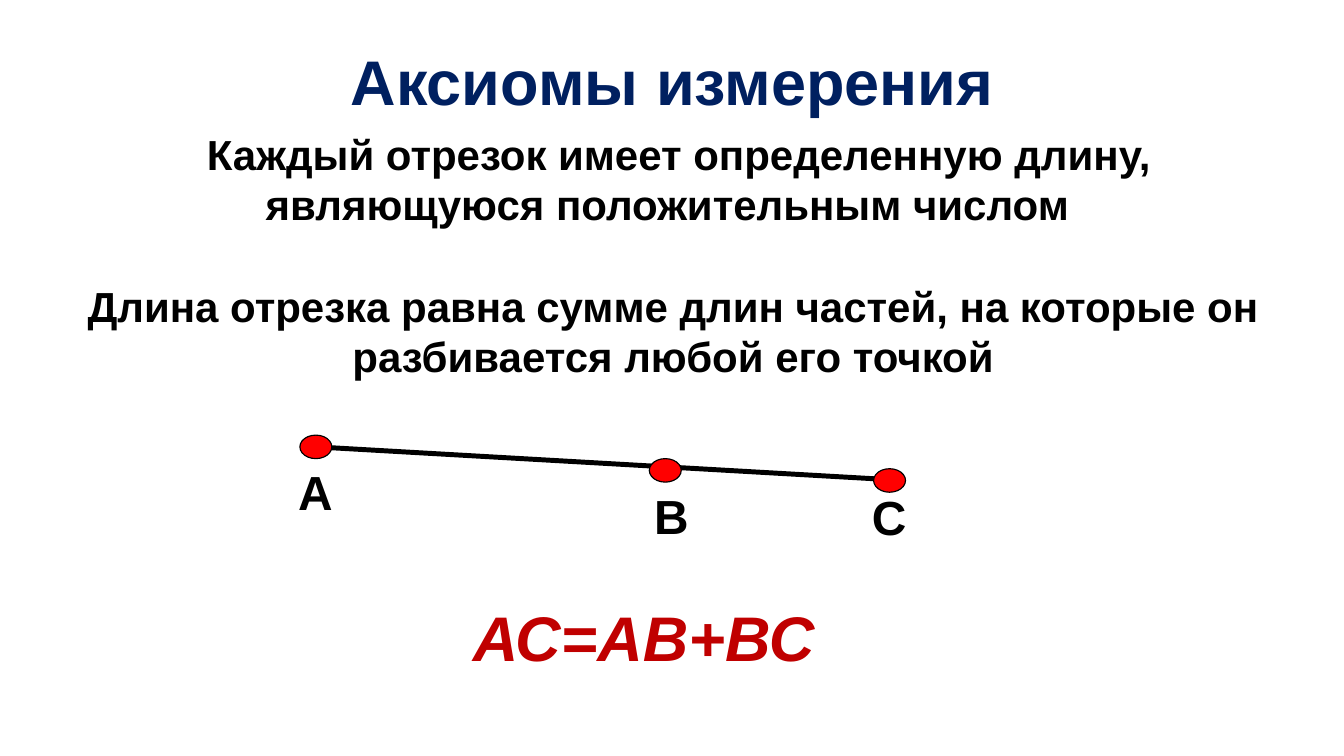
from dataclasses import dataclass

from lxml import etree
from pptx import Presentation, util as u
from pptx.dml.color import RGBColor
from pptx.enum import shapes, text
from pptx.oxml import ns


@dataclass(frozen=True)
class Theme:
    font: str = "Arial"
    navy: str = "002060"
    black: str = "000000"
    red: str = "FF0000"
    dark_red: str = "C00000"
    title: int = 54
    body: int = 36
    label: int = 41
    formula: int = 54
    axiom_gap: float = 43.5
    segment_width: float = 4.25
    dot_outline: float = 1


@dataclass(frozen=True)
class Box:
    """A place on the grid, in columns and rows."""
    col: float
    row: float
    cols: float
    rows: float


@dataclass(frozen=True)
class Point:
    name: str
    dot: Box
    label: Box


THEME = Theme()
COLS, ROWS = 16, 9
CELL = u.Inches(1)

TITLE = Box(0.88, 0.44, 14.24, 1.05)
BODY = Box(0.69, 1.46, 14.65, 3.17)
FORMULA = Box(5.53, 7.08, 4.31, 1.01)
SEGMENT = (3.76, 5.32, 10.76, 5.72)
DOT_SIZE = (0.38, 0.28)
LABEL_SIZE = (0.62, 0.79)

AXIOMS = (
    "\u00a0Каждый отрезок имеет определенную длину, являющуюся положительным числом ",
    "Длина отрезка равна сумме длин частей, на которые он разбивается любой его точкой",
)
POINTS = (
    Point("А", Box(3.57, 5.18, *DOT_SIZE), Box(3.45, 5.46, *LABEL_SIZE)),
    Point("С", Box(10.4, 5.58, *DOT_SIZE), Box(10.28, 5.76, *LABEL_SIZE)),
    Point("В", Box(7.73, 5.46, *DOT_SIZE), Box(7.69, 5.75, *LABEL_SIZE)),
)


def grid(*lengths: float) -> list[int]:
    return [round(length * CELL) for length in lengths]


def place(box: Box) -> list[int]:
    return grid(box.col, box.row, box.cols, box.rows)


def set_frame(tf, inset_x: float, inset_y: float, wrap: bool) -> None:
    tf.margin_left = tf.margin_right = u.Inches(inset_x)
    tf.margin_top = tf.margin_bottom = u.Inches(inset_y)
    tf.vertical_anchor = text.MSO_ANCHOR.TOP
    tf.auto_size = text.MSO_AUTO_SIZE.SHAPE_TO_FIT_TEXT
    tf.word_wrap = wrap


def add_run(p, words: str, size: int, color: str, italic: bool = False) -> None:
    r = p.add_run()
    r.text = words
    r.font.name = THEME.font
    r.font.size = u.Pt(size)
    r.font.bold = True
    r.font.italic = italic
    r.font.color.rgb = RGBColor.from_string(color)


def add_title(s) -> None:
    sp = s.shapes.title
    sp.left, sp.top, sp.width, sp.height = place(TITLE)
    set_frame(sp.text_frame, 0.14, 0.07, True)
    p = sp.text_frame.paragraphs[0]
    p.alignment = text.PP_ALIGN.CENTER
    add_run(p, "Аксиомы измерения", THEME.title, THEME.navy)


def add_axioms(s) -> None:
    tf = s.shapes.add_textbox(*place(BODY)).text_frame
    set_frame(tf, 0.14, 0.07, True)
    for i, axiom in enumerate(AXIOMS):
        p = tf.add_paragraph() if i else tf.paragraphs[0]
        p.alignment = text.PP_ALIGN.CENTER
        p.space_before = u.Pt(THEME.axiom_gap if i else 0)
        add_run(p, axiom, THEME.body, THEME.black)


def add_caption(s, box: Box, words: str, size: int, color: str,
                italic: bool = False) -> None:
    tf = s.shapes.add_textbox(*place(box)).text_frame
    set_frame(tf, 0.1, 0.05, False)
    add_run(tf.paragraphs[0], words, size, color, italic)


def add_segment(s) -> None:
    line = s.shapes.add_connector(shapes.MSO_CONNECTOR.STRAIGHT, *grid(*SEGMENT))
    line.line.color.rgb = RGBColor.from_string(THEME.black)
    line.line.width = u.Pt(THEME.segment_width)
    etree.SubElement(line._element.spPr, ns.qn("a:effectLst"))


def add_dot(s, box: Box) -> None:
    sp = s.shapes.add_shape(shapes.MSO_SHAPE.OVAL, *place(box))
    sp.shadow.inherit = False
    sp.fill.solid()
    sp.fill.fore_color.rgb = RGBColor.from_string(THEME.red)
    sp.line.color.rgb = RGBColor.from_string(THEME.black)
    sp.line.width = u.Pt(THEME.dot_outline)


def main() -> None:
    prs = Presentation()
    prs.slide_width, prs.slide_height = grid(COLS, ROWS)
    s = prs.slides.add_slide(prs.slide_layouts[5])

    # Title and axioms
    add_title(s)
    add_axioms(s)

    # Segment with its points
    add_segment(s)
    for point in POINTS:
        add_dot(s, point.dot)
        add_caption(s, point.label, point.name, THEME.label, THEME.black)

    # Sum of the parts
    add_caption(s, FORMULA, "АС=АВ+ВС", THEME.formula, THEME.dark_red, italic=True)

    prs.save("out.pptx")


if __name__ == "__main__":
    main()
